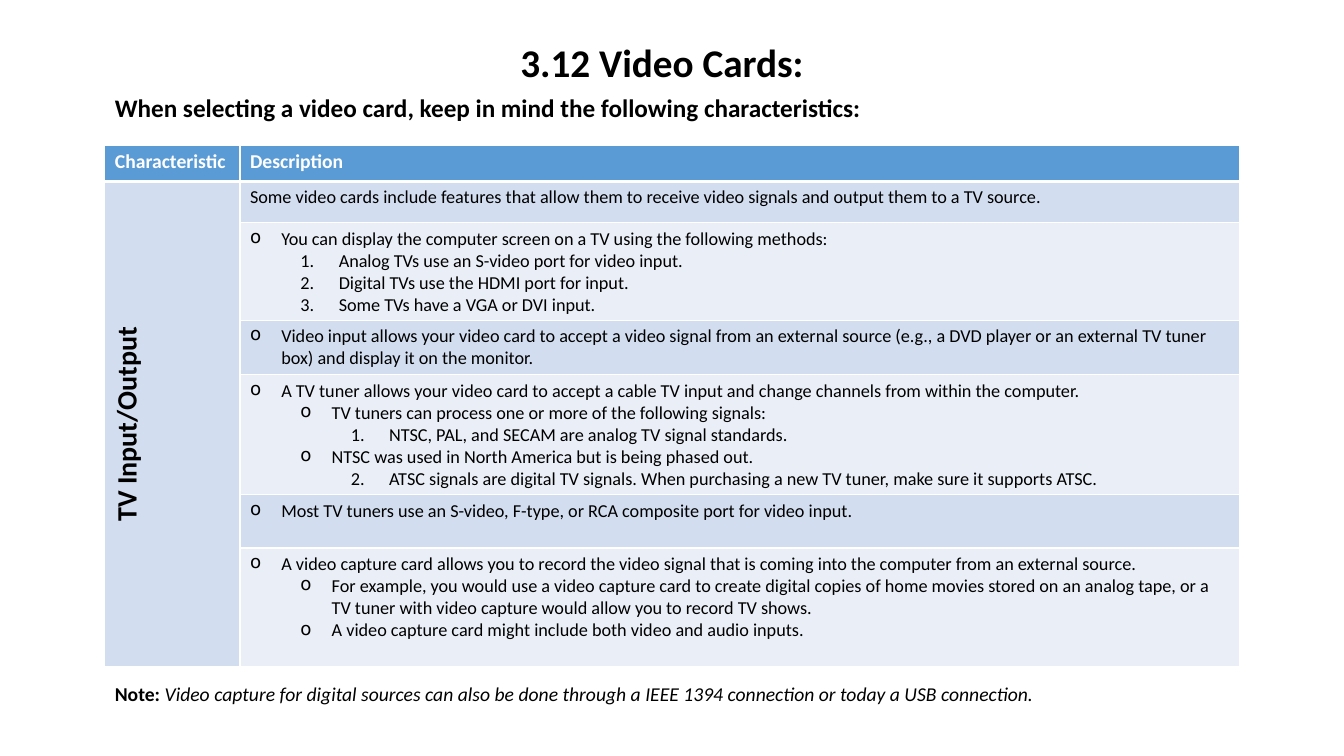
"""Build the slide on video card characteristics for TV input and output."""
from dataclasses import dataclass

from lxml.etree import SubElement
from pptx import Presentation
from pptx.dml.color import RGBColor
from pptx.enum.text import MSO_ANCHOR, MSO_AUTO_SIZE, PP_ALIGN
from pptx.oxml.ns import qn
from pptx.util import Inches, Pt

TITLE = "3.12 Video Cards:"
SUBTITLE = "When selecting a video card, keep in mind the following characteristics:"
NOTE_LABEL = "Note: "
NOTE = "Video capture for digital sources can also be done through a IEEE 1394 connection or today a USB connection."
HEADERS = ("Characteristic", "Description")
CHARACTERISTIC = "TV Input/Output"

DESCRIPTIONS = [
    (0.41, [("", 0, "Some video cards include features that allow them to receive video signals and output them to a TV source.")]),
    (0.96, [
        ("o", 0, "You can display the computer screen on a TV using the following methods:"),
        (1, 1, "Analog TVs use an S-video port for video input."),
        (1, 1, "Digital TVs use the HDMI port for input."),
        (1, 1, "Some TVs have a VGA or DVI input."),
    ]),
    (0.54, [("o", 0, "Video input allows your video card to accept a video signal from an external source (e.g., a DVD player or an external TV tuner box) and display it on the monitor.")]),
    (1.19, [
        ("o", 0, "A TV tuner allows your video card to accept a cable TV input and change channels from within the computer."),
        ("o", 1, "TV tuners can process one or more of the following signals:"),
        (1, 2, "NTSC, PAL, and SECAM are analog TV signal standards."),
        ("o", 1, "NTSC was used in North America but is being phased out."),
        (2, 2, "ATSC signals are digital TV signals. When purchasing a new TV tuner, make sure it supports ATSC."),
    ]),
    (0.53, [("o", 0, "Most TV tuners use an S-video, F-type, or RCA composite port for video input.")]),
    (1.18, [
        ("o", 0, "A video capture card allows you to record the video signal that is coming into the computer from an external source."),
        ("o", 1, "For example, you would use a video capture card to create digital copies of home movies stored on an analog tape, or a TV tuner with video capture would allow you to record TV shows."),
        ("o", 1, "A video capture card might include both video and audio inputs."),
    ]),
]

LEFT = 1.04
TABLE_TOP = 1.44
HEADER_HEIGHT = 0.36
COLUMN_WIDTHS = (1.34, 9.91)
LEVEL_STEP = 0.5


@dataclass(frozen=True)
class Theme:
    """Colours, font and type sizes of the slide."""
    font: str = "Calibri"
    black: str = "000000"
    white: str = "FFFFFF"
    header: str = "5B9BD5"
    bands: tuple = ("D2DEEF", "EAEFF7")
    title: int = 28
    side: int = 20
    subtitle: int = 18
    label: int = 14
    body: int = 13


THEME = Theme()


def write(paragraph, text, size=THEME.body, color=THEME.black, bold=False, italic=False, align=None):
    """Add a formatted run to a paragraph."""
    if align is not None:
        paragraph.alignment = align
    run = paragraph.add_run()
    run.text = text
    font = run.font
    font.name, font.size, font.bold, font.italic = THEME.font, Pt(size), bold, italic
    font.color.rgb = RGBColor.from_string(color)


def mark(paragraph, marker, level):
    """Give a paragraph its level, indent and bullet or number."""
    numbered = isinstance(marker, int)
    hanging = 0.38 if numbered else 0.31
    paragraph.level = level
    properties = paragraph._p.get_or_add_pPr()
    properties.set("marL", str(Inches(level * LEVEL_STEP + hanging)))
    properties.set("indent", str(-Inches(hanging)))
    if numbered:
        SubElement(properties, qn("a:buAutoNum"), type="arabicPeriod", startAt=str(marker))
    else:
        SubElement(properties, qn("a:buChar"), char=marker)


def style_cell(cell, color, top=1, bottom=1):
    """Set a cell's white borders and its fill."""
    properties = cell._tc.get_or_add_tcPr()
    for side, width in (("L", 1), ("R", 1), ("T", top), ("B", bottom)):
        line = SubElement(properties, qn(f"a:ln{side}"), w=str(Pt(width)))
        SubElement(SubElement(line, qn("a:solidFill")), qn("a:srgbClr"), val=THEME.white)
    cell.fill.solid()
    cell.fill.fore_color.rgb = RGBColor.from_string(color)


def add_line(slide, top, width, height):
    """Add a wrapping text box and return its paragraph."""
    box = slide.shapes.add_textbox(Inches(LEFT), Inches(top), Inches(width), Inches(height))
    box.text_frame.word_wrap = True
    return box.text_frame.paragraphs[0]


def add_title(slide):
    """Place the title above the table."""
    title = slide.shapes.title
    title.left, title.top, title.width, title.height = map(Inches, (5.04, 0.33, 3.05, 0.57))
    frame = title.text_frame
    frame.word_wrap = False
    frame.auto_size = MSO_AUTO_SIZE.NONE
    frame.vertical_anchor = MSO_ANCHOR.TOP
    write(frame.paragraphs[0], TITLE, size=THEME.title, bold=True, align=PP_ALIGN.CENTER)


def add_characteristics(slide):
    """Add the table of characteristics."""
    heights = [HEADER_HEIGHT] + [height for height, _ in DESCRIPTIONS]
    table = slide.shapes.add_table(
        len(heights), len(COLUMN_WIDTHS), Inches(LEFT), Inches(TABLE_TOP),
        Inches(sum(COLUMN_WIDTHS)), Inches(sum(heights))).table
    for column, width in zip(table.columns, COLUMN_WIDTHS):
        column.width = Inches(width)
    for row, height in zip(table.rows, heights):
        row.height = Inches(height)

    for cell, header in zip(table.rows[0].cells, HEADERS):
        style_cell(cell, THEME.header, bottom=3)
        write(cell.text_frame.paragraphs[0], header, size=THEME.label, color=THEME.white, bold=True)

    for index, (_, items) in enumerate(DESCRIPTIONS):
        top = 3 if index == 0 else 1
        style_cell(table.cell(index + 1, 0), THEME.bands[0], top=top)
        cell = table.cell(index + 1, 1)
        style_cell(cell, THEME.bands[index % 2], top=top)
        for position, (marker, level, text) in enumerate(items):
            frame = cell.text_frame
            paragraph = frame.add_paragraph() if position else frame.paragraphs[0]
            if marker:
                mark(paragraph, marker, level)
            write(paragraph, text)

    side = table.cell(1, 0)
    side.merge(table.cell(len(DESCRIPTIONS), 0))
    side.vertical_anchor = MSO_ANCHOR.MIDDLE
    side._tc.get_or_add_tcPr().set("vert", "vert270")
    write(side.text_frame.paragraphs[0], CHARACTERISTIC, size=THEME.side, bold=True, align=PP_ALIGN.CENTER)


def main():
    """Build and save the presentation."""
    presentation = Presentation()
    presentation.slide_width, presentation.slide_height = Inches(13.33), Inches(7.5)
    slide = presentation.slides.add_slide(presentation.slide_layouts.get_by_name("Title Only"))
    add_title(slide)
    write(add_line(slide, 0.87, 12.2, 0.4), SUBTITLE, size=THEME.subtitle, bold=True)
    add_characteristics(slide)
    note = add_line(slide, 6.72, sum(COLUMN_WIDTHS), 0.34)
    write(note, NOTE_LABEL, size=THEME.label, bold=True)
    write(note, NOTE, size=THEME.label, italic=True)
    presentation.save("out.pptx")


if __name__ == "__main__":
    main()
